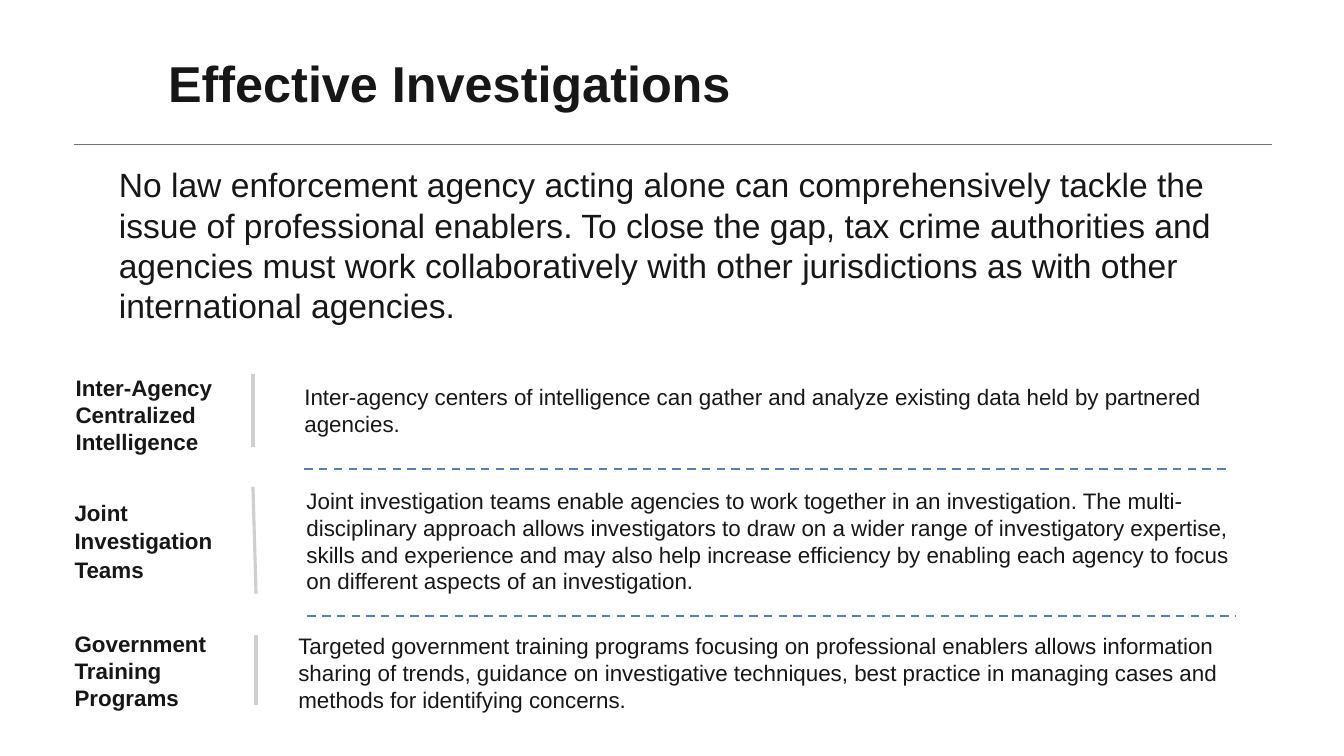
"""Build the Effective Investigations slide."""
from lxml import etree
from pptx import Presentation
from pptx.dml.color import RGBColor
from pptx.enum.dml import MSO_LINE_DASH_STYLE as Dash
from pptx.enum.shapes import MSO_CONNECTOR as Connector
from pptx.enum.text import MSO_ANCHOR as Anchor
from pptx.oxml.ns import qn
from pptx.util import Pt

TITLE = "Effective Investigations"
INTRO = (
    "No law enforcement agency acting alone can comprehensively tackle the issue of "
    "professional enablers. To close the gap, tax crime authorities and agencies must work "
    "collaboratively with other jurisdictions as with other international agencies."
)
ROWS = [
    {
        "label": "Inter-Agency Centralized Intelligence",
        "label_box": (54, 267.1, 118, 57.6),
        "label_format": {},
        "body": "Inter-agency centers of intelligence can gather and analyze existing data "
                "held by partnered agencies.",
        "body_box": (217.4, 273.6, 689.8, 40.3),
        "bar": (180.7, 267.1, 180.7, 319),
    },
    {
        "label": "Joint Investigation Teams",
        "label_box": (53.3, 347.8, 115.2, 75.6),
        "label_format": {"line_spacing": 1.06, "space_after": Pt(4.5)},
        "body": "Joint investigation teams enable agencies to work together in an investigation. "
                "The multi-disciplinary approach allows investigators to draw on a wider range of "
                "investigatory expertise, skills and experience and may also help increase "
                "efficiency by enabling each agency to focus on different aspects of an "
                "investigation.",
        "body_box": (218.9, 347.8, 668.9, 90.7),
        "bar": (180.7, 347.8, 182.9, 424.1),
    },
    {
        "label": "Government Training Programs",
        "label_box": (53.3, 450.7, 106.6, 56.2),
        "label_format": {},
        "body": "Targeted government training programs focusing on professional enablers allows "
                "information sharing of trends, guidance on investigative techniques, best "
                "practice in managing cases and methods for identifying concerns.",
        "body_box": (213.1, 451.4, 666.7, 68.4),
        "bar": (182.9, 453.6, 182.9, 503.3),
    },
]
SEPARATORS = [(217.4, 334.8, 879.8, 334.8), (219.6, 439.9, 882.7, 439.9)]
TITLE_RULE = (52.6, 103, 908.6, 103)
INK, RULE, BAR, DASHED = "171717", "727272", "CFCFCF", "4F81BD"
PADDING = {"margin_left": 7.2, "margin_right": 7.2, "margin_top": 3.6, "margin_bottom": 3.6}


def color(value):
    return RGBColor.from_string(value)


def set_all(target, values):
    for name, value in values.items():
        setattr(target, name, value)


def add_text(slide, text, box, size, bold=False, anchor=Anchor.TOP, padded=False, layout=None):
    shape = slide.shapes.add_textbox(*map(Pt, box))
    frame = shape.text_frame
    margins = {name: Pt(value if padded else 0) for name, value in PADDING.items()}
    set_all(frame, {"word_wrap": True, "vertical_anchor": anchor, **margins})
    paragraph = frame.paragraphs[0]
    set_all(paragraph, layout or {})
    run = paragraph.add_run()
    run.text = text
    set_all(run.font, {"name": "Arial", "size": Pt(size), "bold": bold})
    run.font.color.rgb = color(INK)


def add_line(slide, ends, line_color, width, dash=None):
    connector = slide.shapes.add_connector(Connector.STRAIGHT, *map(Pt, ends))
    connector.line.color.rgb = color(line_color)
    set_all(connector.line, {"width": Pt(width), "dash_style": dash})
    etree.SubElement(connector.element.spPr, qn("a:effectLst"))


def main():
    presentation = Presentation()
    set_all(presentation, {"slide_width": Pt(960), "slide_height": Pt(540)})
    slide = presentation.slides.add_slide(presentation.slide_layouts[6])
    add_line(slide, TITLE_RULE, RULE, 0.5)
    add_text(slide, TITLE, (113, 18.7, 778.3, 80.6), 36, True, Anchor.MIDDLE, True)
    add_text(slide, INTRO, (77.8, 113.8, 849.6, 123.8), 24, padded=True)
    for row in ROWS:
        add_text(slide, row["label"], row["label_box"], 16, True, Anchor.MIDDLE,
                 layout=row["label_format"])
        add_text(slide, row["body"], row["body_box"], 16)
        add_line(slide, row["bar"], BAR, 2.25)
    for ends in SEPARATORS:
        add_line(slide, ends, DASHED, 1.5, Dash.DASH)
    presentation.save("out.pptx")


if __name__ == "__main__":
    main()
